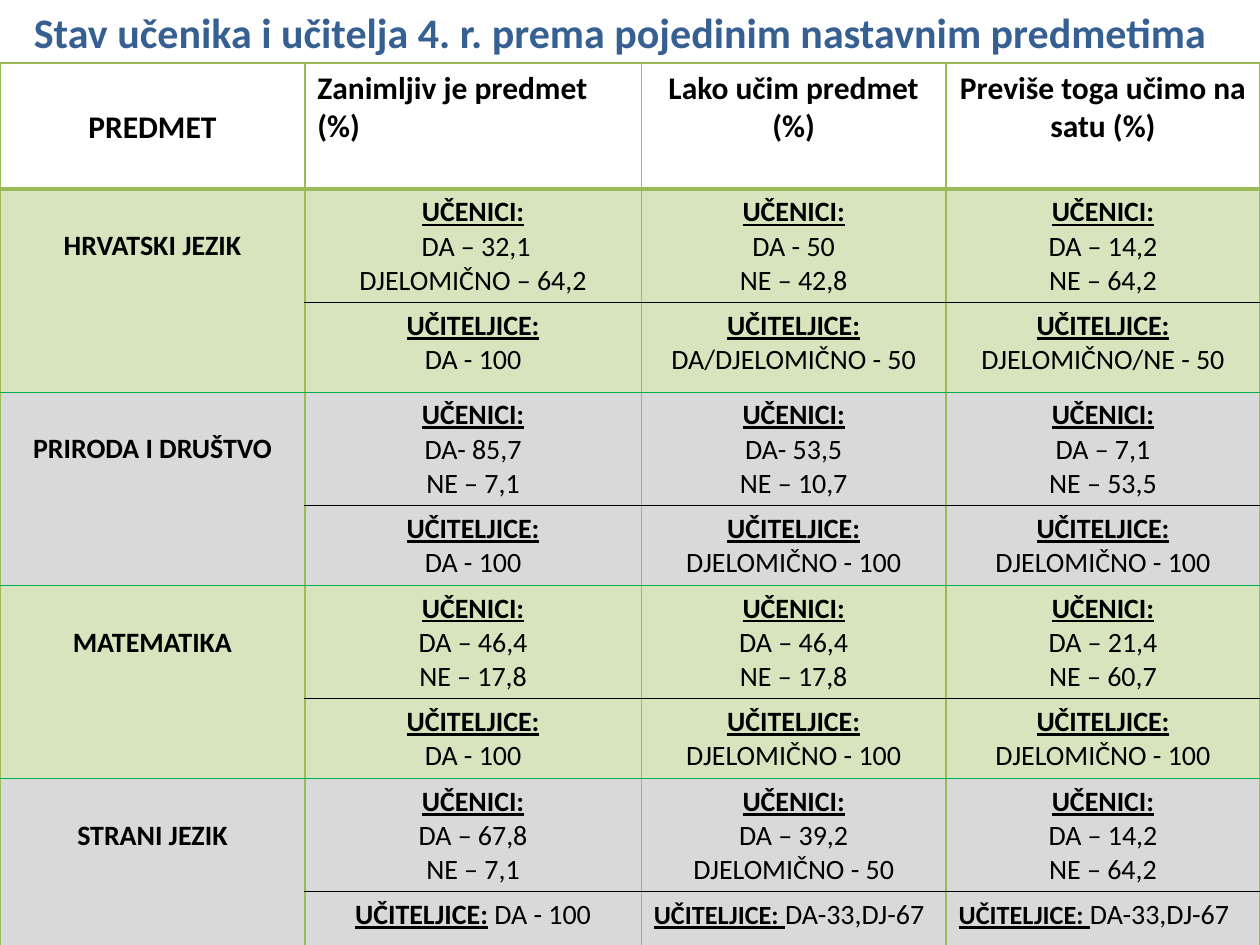
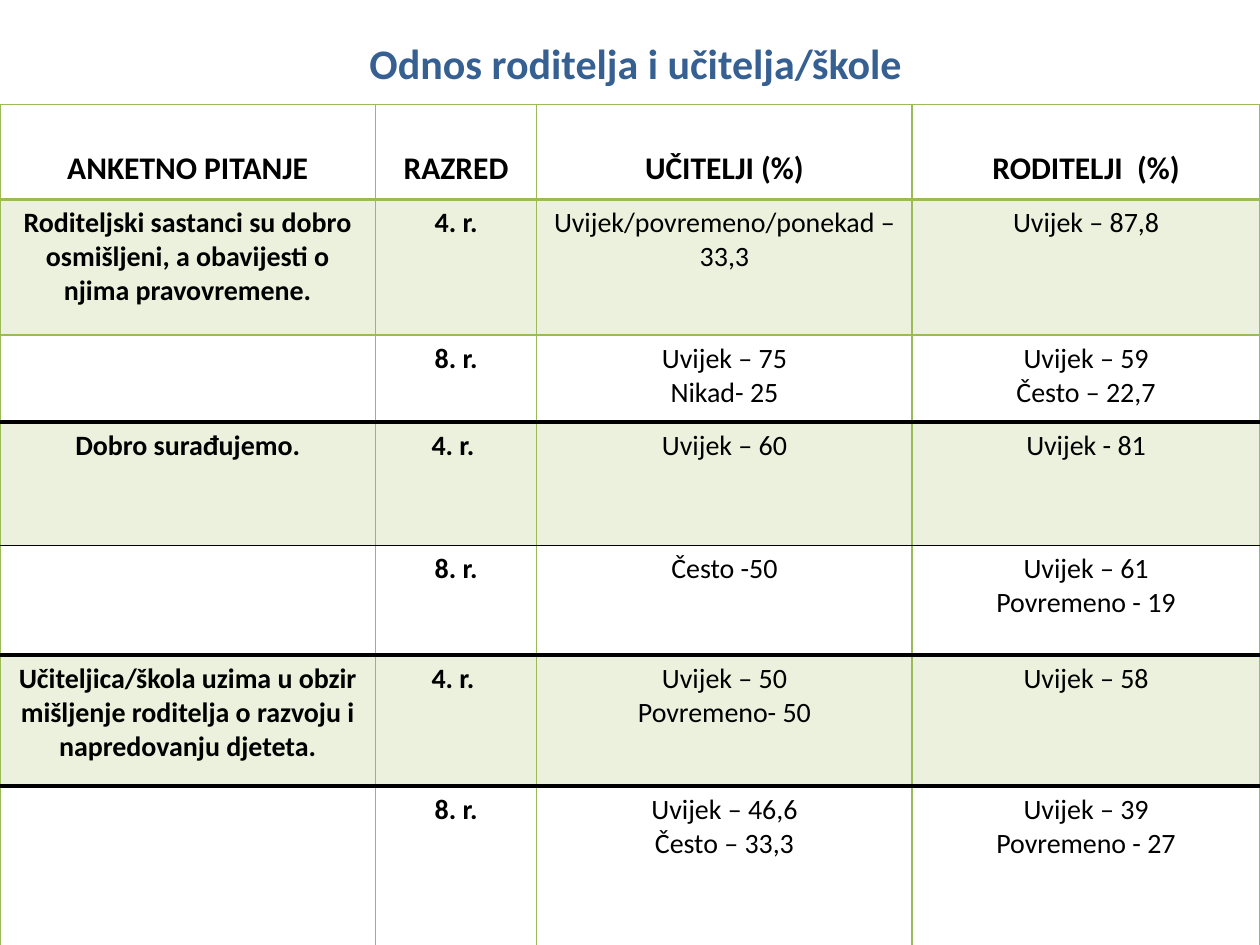
"""Build two slides of survey tables on pupils, teachers and parents."""
from dataclasses import dataclass
from typing import Any, Optional

import lxml.etree
import pptx
import pptx.dml.color
import pptx.enum.text
import pptx.oxml.ns
import pptx.util

Inches = pptx.util.Inches
Pt = pptx.util.Pt
RGB = pptx.dml.color.RGBColor
ALIGN = pptx.enum.text.PP_ALIGN
qn = pptx.oxml.ns.qn

FACE = "Calibri"
BLUE = RGB(0x37, 0x60, 0x92)
BLACK = RGB(0, 0, 0)
GREEN = RGB(0x9B, 0xBB, 0x59)
EDGE = RGB(0x00, 0xB0, 0x50)
PALE = RGB(0xD7, 0xE4, 0xBD)
GREY = RGB(0xD9, 0xD9, 0xD9)


@dataclass(frozen=True)
class Run:
    """A piece of text with its format."""
    text: str
    size: int = 16
    bold: bool = False
    line: bool = False


@dataclass(frozen=True)
class Rule:
    """A border colour and width in points."""
    tint: RGB
    width: float


@dataclass(frozen=True)
class Cell:
    """Paragraphs of runs, their alignment and the top margin in inches."""
    paras: list[list[Run]]
    align: Any = ALIGN.CENTER
    top: float = 0.05


@dataclass(frozen=True)
class Row:
    """Height, cells, bottom rule and fill of a table row."""
    height: float
    cells: list[Cell]
    base: Rule
    fill: Optional[RGB] = None
    alpha: int = 100


@dataclass(frozen=True)
class Grid:
    """Place, columns and rows of a table; pairs merges labels over two rows."""
    top: float
    cols: list[float]
    rows: list[Row]
    pairs: bool = False


@dataclass(frozen=True)
class Title:
    """Text, place and alignment of a slide title."""
    text: str
    left: float
    top: float
    width: float
    align: Any = ALIGN.CENTER


SIDE = Rule(GREEN, 1)
HEAVY = Rule(GREEN, 2)
THIN = Rule(BLACK, 0.25)
THICK = Rule(BLACK, 2.25)
SPLIT = Rule(EDGE, 0.25)
DROP = 0.32
HEAD_DROP = 0.36


def apply(item: Any, form: dict[str, Any]) -> None:
    """Set each format value on the item."""
    for name, value in form.items():
        setattr(item, name, value)


def write(para: Any, runs: list[Run], align: Any, tint: RGB) -> None:
    """Fill a paragraph with runs."""
    para.alignment = align
    for part in runs:
        run = para.add_run()
        run.text = part.text
        apply(run.font, {"name": FACE, "size": Pt(part.size),
                         "bold": part.bold, "underline": part.line})
        run.font.color.rgb = tint


def border(cell: Any, side: str, rule: Rule) -> None:
    """Draw one border of a table cell."""
    props = cell._tc.get_or_add_tcPr()
    line = lxml.etree.SubElement(props, qn(f"a:ln{side}"), w=str(int(Pt(rule.width))))
    solid = lxml.etree.SubElement(line, qn("a:solidFill"))
    lxml.etree.SubElement(solid, qn("a:srgbClr"), val=str(rule.tint))


def paint(cell: Any, row: Row) -> None:
    """Fill a table cell or leave it clear."""
    if row.fill is None:
        cell.fill.background()
        return
    cell.fill.solid()
    cell.fill.fore_color.rgb = row.fill
    if row.alpha < 100:
        tint = cell._tc.tcPr.find(f"{qn('a:solidFill')}/{qn('a:srgbClr')}")
        lxml.etree.SubElement(tint, qn("a:alpha"), val=str(row.alpha * 1000))


def fill_cell(cell: Any, data: Cell) -> None:
    """Write the paragraphs of a cell."""
    cell.margin_top = Inches(data.top)
    frame = cell.text_frame
    for num, runs in enumerate(data.paras):
        para = frame.add_paragraph() if num else frame.paragraphs[0]
        write(para, runs, data.align, BLACK)


def draw_title(slide: Any, title: Title) -> None:
    """Add the slide title."""
    box = slide.shapes.add_textbox(Inches(title.left), Inches(title.top),
                                   Inches(title.width), Inches(0.5))
    apply(box.text_frame, {"word_wrap": True,
                           "auto_size": pptx.enum.text.MSO_AUTO_SIZE.SHAPE_TO_FIT_TEXT})
    write(box.text_frame.paragraphs[0], [Run(title.text, 24, True)], title.align, BLUE)


def draw_grid(slide: Any, grid: Grid) -> None:
    """Add a table with its rules, fills and text."""
    rows = grid.rows
    high = sum(row.height for row in rows)
    table = slide.shapes.add_table(len(rows), len(grid.cols), Inches(0), Inches(grid.top),
                                   Inches(10), Inches(high)).table
    apply(table, {"first_row": False, "horz_banding": False})
    for col, width in zip(table.columns, grid.cols):
        col.width = Inches(width)
    for r, row in enumerate(rows):
        table.rows[r].height = Inches(row.height)
        for c, data in enumerate(row.cells):
            first = last = r
            if grid.pairs and c == 0 and r:
                first = r - (r + 1) % 2
                last = first + 1
            cell = table.cell(r, c)
            border(cell, "L", SIDE)
            border(cell, "R", SIDE)
            border(cell, "T", rows[first - 1].base if first else SIDE)
            border(cell, "B", rows[last].base)
            paint(cell, row)
            fill_cell(cell, data)
    if grid.pairs:
        for r in range(1, len(rows), 2):
            table.cell(r, 0).merge(table.cell(r + 1, 0))


def head(text: str, align: Any = ALIGN.CENTER, top: float = 0.05) -> Cell:
    """Make a heading cell."""
    return Cell([[Run(text, 18, True)]], align, top)


def label(text: str, top: float = 0.05) -> Cell:
    """Make a bold label cell."""
    return Cell([[Run(text, bold=True)]] if text else [], top=top)


def plain(text: str) -> Cell:
    """Make a cell with one paragraph a line."""
    return Cell([[Run(line)] for line in text.split("\n")])


def group(name: str, text: str) -> Cell:
    """Make an answer cell under an underlined group name."""
    return Cell([[Run(name, bold=True, line=True)], *plain(text).paras])


def inline(text: str, size: int, line: bool, align: Any) -> Cell:
    """Make a teacher cell whose answer follows on the same line."""
    return Cell([[Run(STAFF, size, True, True), Run(" ", 16, True, line), Run(text)]], align)


PUPILS = "UČENICI:"
STAFF = "UČITELJICE:"
SUBJECTS = [
    ("HRVATSKI JEZIK", 0.71,
     [" DA – 32,1\nDJELOMIČNO – 64,2", "DA - 50\nNE – 42,8", "DA – 14,2\nNE – 64,2"],
     ["DA - 100", "DA/DJELOMIČNO - 50", "DJELOMIČNO/NE - 50"]),
    ("PRIRODA I DRUŠTVO", 0.63,
     ["DA- 85,7\nNE – 7,1", "DA- 53,5\nNE – 10,7", "DA – 7,1\nNE – 53,5"],
     ["DA - 100", "DJELOMIČNO - 100", "DJELOMIČNO - 100"]),
    ("MATEMATIKA", 0.63,
     ["DA – 46,4\nNE – 17,8", "DA – 46,4\nNE – 17,8", "DA – 21,4\nNE – 60,7"],
     ["DA - 100", "DJELOMIČNO - 100", "DJELOMIČNO - 100"]),
    ("STRANI JEZIK", 0.49,
     ["DA – 67,8\nNE – 7,1", "DA – 39,2\nDJELOMIČNO - 50", "DA – 14,2\nNE – 64,2"],
     ["DA - 100", "DA-33,DJ-67", "DA-33,DJ-67"]),
]
VIEWS = [
    (1.08, "Roditeljski sastanci su dobro osmišljeni, a obavijesti o njima pravovremene.",
     "4. r.", "Uvijek/povremeno/ponekad – 33,3", "Uvijek – 87,8", SIDE),
    (0.69, "", "8. r.", "Uvijek – 75\nNikad- 25", "Uvijek – 59\nČesto – 22,7", THICK),
    (0.98, "Dobro surađujemo.", "4. r. ", "Uvijek – 60", "Uvijek - 81", THIN),
    (0.87, "", "8. r.", "Često -50", "Uvijek – 61\nPovremeno - 19", THICK),
    (1.04, "Učiteljica/škola uzima u obzir mišljenje roditelja o razvoju i napredovanju djeteta.",
     "4. r. ", "Uvijek – 50\nPovremeno- 50", "Uvijek – 58", THICK),
    (1.35, "", "8. r.", "Uvijek – 46,6\nČesto – 33,3", "Uvijek – 39\nPovremeno - 27", SIDE),
]


def subject_grid() -> Grid:
    """Lay out the views on school subjects."""
    rows = [Row(1, [head("PREDMET", top=HEAD_DROP),
                    head("Zanimljiv je predmet (%)", ALIGN.LEFT),
                    head("Lako učim predmet (%)"),
                    head("Previše toga učimo na satu (%)")], HEAVY)]
    for num, (name, height, pupils, staff) in enumerate(SUBJECTS):
        fill = GREY if num % 2 else PALE
        final = num == len(SUBJECTS) - 1
        if final:
            notes = [inline(staff[0], 16, False, ALIGN.CENTER),
                     *(inline(text, 15, True, ALIGN.LEFT) for text in staff[1:])]
        else:
            notes = [group(STAFF, text) for text in staff]
        rows.append(Row(0.9, [label(name, DROP), *(group(PUPILS, text) for text in pupils)],
                        THIN, fill))
        rows.append(Row(height, [label(""), *notes], SIDE if final else SPLIT, fill))
    return Grid(0.5, [2.42, 2.67, 2.42, 2.49], rows, True)


def parent_grid() -> Grid:
    """Lay out the views of teachers and parents."""
    names = ["ANKETNO PITANJE", "RAZRED", "UČITELJI (%)", "RODITELJI  (%)"]
    rows = [Row(0.75, [head(name, top=HEAD_DROP) for name in names], HEAVY)]
    for height, ask, grade, staff, home, base in VIEWS:
        rows.append(Row(height, [label(ask), label(grade), plain(staff), plain(home)],
                        base, GREEN if ask else None, 20))
    return Grid(0.83, [2.98, 1.28, 2.98, 2.76], rows)


def main() -> None:
    """Build and save the deck."""
    deck = pptx.Presentation()
    apply(deck, {"slide_width": Inches(10), "slide_height": Inches(7.5)})
    pages = [
        (Title("Stav učenika i učitelja 4. r. prema pojedinim nastavnim predmetima",
               0.17, 0, 9.58, ALIGN.LEFT), subject_grid()),
        (Title("Odnos roditelja i učitelja/škole", 1.67, 0.25, 6.75), parent_grid()),
    ]
    for title, grid in pages:
        slide = deck.slides.add_slide(deck.slide_layouts[6])
        draw_title(slide, title)
        draw_grid(slide, grid)
    deck.save("out.pptx")


if __name__ == "__main__":
    main()
